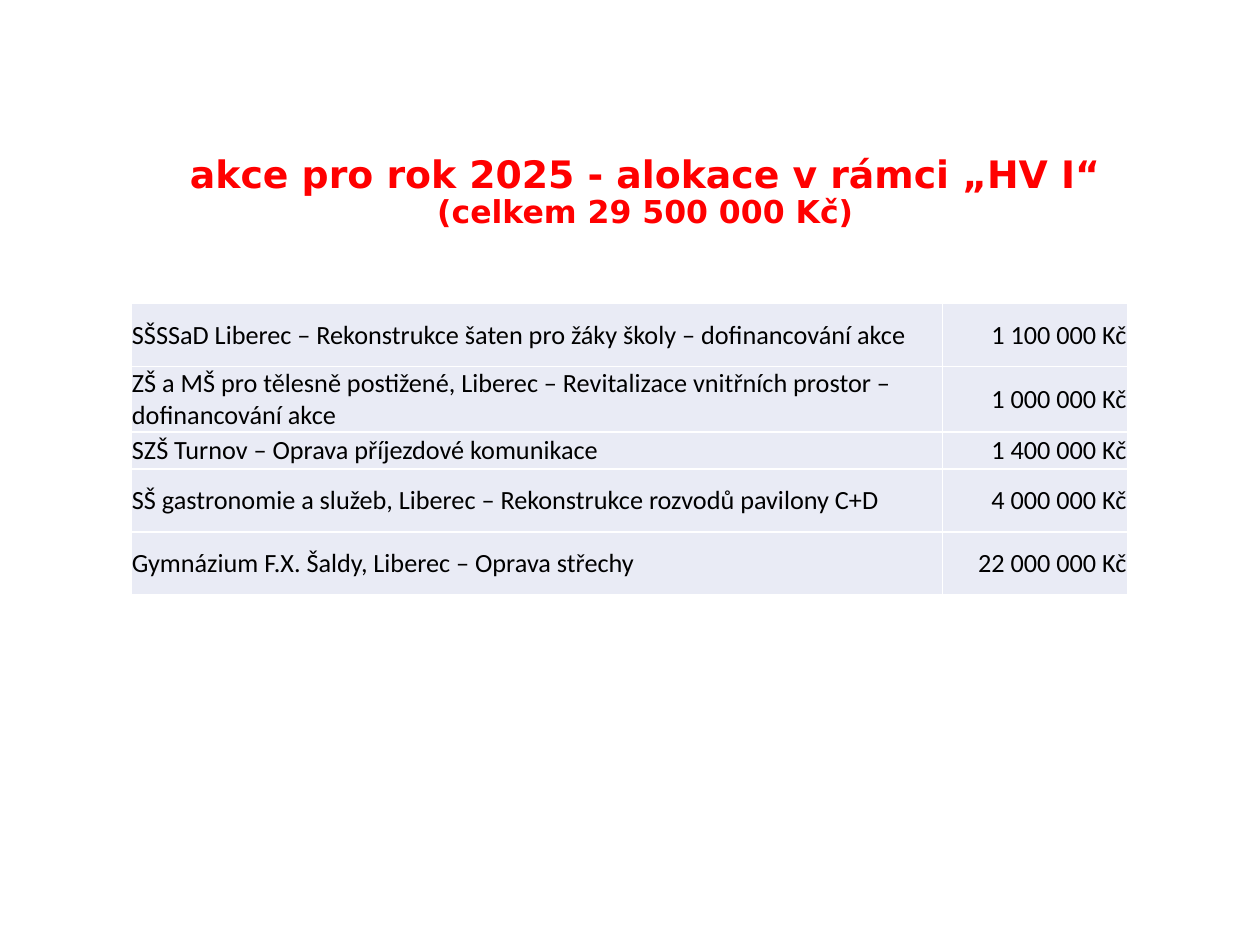
import pptx
import pptx.util
import pptx.dml.color
import pptx.enum.text
import pptx.oxml
import pptx.oxml.ns

Cm, Pt = pptx.util.Cm, pptx.util.Pt
ALIGN = pptx.enum.text.PP_ALIGN
MIDDLE = pptx.enum.text.MSO_ANCHOR.MIDDLE

TITLE = [("akce pro rok 2025 - alokace v rámci „HV I“", 21.6),
         ("(celkem 29 500 000 Kč)", 18)]
# project, amount, row height in cm, alignment of the project
ROWS = [
    ("SŠSSaD Liberec – Rekonstrukce šaten pro žáky školy – dofinancování akce",
     "1 100 000 Kč", 1.27, ALIGN.JUSTIFY),
    ("ZŠ a MŠ pro tělesně postižené, Liberec – Revitalizace vnitřních prostor"
     " – dofinancování akce", "1 000 000 Kč", 1.32, ALIGN.LEFT),
    ("SZŠ Turnov – Oprava příjezdové komunikace",
     "1 400 000 Kč", 0.74, ALIGN.JUSTIFY),
    ("SŠ gastronomie a služeb, Liberec – Rekonstrukce rozvodů pavilony C+D",
     "4 000 000 Kč", 1.27, ALIGN.JUSTIFY),
    ("Gymnázium F.X. Šaldy, Liberec – Oprava střechy",
     "22 000 000 Kč", 1.27, ALIGN.JUSTIFY),
]
WIDTHS = [16.36, 3.73]
COLORS = {"title": "FF0000", "text": "000000", "cell": "E9EBF5", "line": "FFFFFF"}
HEAD = {"name": "DejaVu Sans", "bold": True}
BODY = {"name": "Calibri", "size": Pt(15), "bold": False}
CELL = {"margin_left": Cm(0.02), "margin_right": Cm(0.02),
        "margin_top": Cm(0.02), "margin_bottom": Cm(0),
        "vertical_anchor": MIDDLE}


def rgb(key):
    return pptx.dml.color.RGBColor.from_string(COLORS[key])


def style(item, form):
    for name, value in form.items():
        setattr(item, name, value)


def write(para, text, form, color):
    run = para.add_run()
    run.text = text
    style(run.font, form)
    run.font.color.rgb = rgb(color)


def edge(cell):
    """Draw a thin line on all four sides of the cell."""
    props = cell._tc.get_or_add_tcPr()
    for side in ("lnL", "lnR", "lnT", "lnB"):
        props.append(pptx.oxml.parse_xml(
            f'<a:{side} {pptx.oxml.ns.nsdecls("a")} w="{Pt(1)}"><a:solidFill>'
            f'<a:srgbClr val="{COLORS["line"]}"/></a:solidFill></a:{side}>'))


def add_title(slide):
    box = slide.shapes.add_textbox(Cm(2.06), Cm(3.05), Cm(21.9), Cm(1.68))
    frame = box.text_frame
    style(frame, {"word_wrap": True, "vertical_anchor": MIDDLE})
    para = frame.paragraphs[0]
    style(para, {"alignment": ALIGN.CENTER, "line_spacing": 0.9})
    for i, (text, size) in enumerate(TITLE):
        if i:
            para.add_line_break()
        write(para, text, {**HEAD, "size": Pt(size)}, "title")


def add_grid(slide):
    high = sum(row[2] for row in ROWS)
    table = slide.shapes.add_table(len(ROWS), len(WIDTHS), Cm(2.64), Cm(6.12),
                                   Cm(sum(WIDTHS)), Cm(high)).table
    style(table, {"first_row": False, "horz_banding": False})
    for col, width in zip(table.columns, WIDTHS):
        col.width = Cm(width)
    for r, (name, cost, height, align) in enumerate(ROWS):
        table.rows[r].height = Cm(height)
        for c, (text, side) in enumerate([(name, align), (cost, ALIGN.RIGHT)]):
            cell = table.cell(r, c)
            style(cell, CELL)
            edge(cell)
            cell.fill.solid()
            cell.fill.fore_color.rgb = rgb("cell")
            para = cell.text_frame.paragraphs[0]
            para.alignment = side
            write(para, text, BODY, "text")


def main():
    deck = pptx.Presentation()
    style(deck, {"slide_width": Cm(25.4), "slide_height": Cm(19.05)})
    slide = deck.slides.add_slide(deck.slide_layouts[6])
    add_title(slide)
    add_grid(slide)
    deck.save("out.pptx")


if __name__ == "__main__":
    main()
